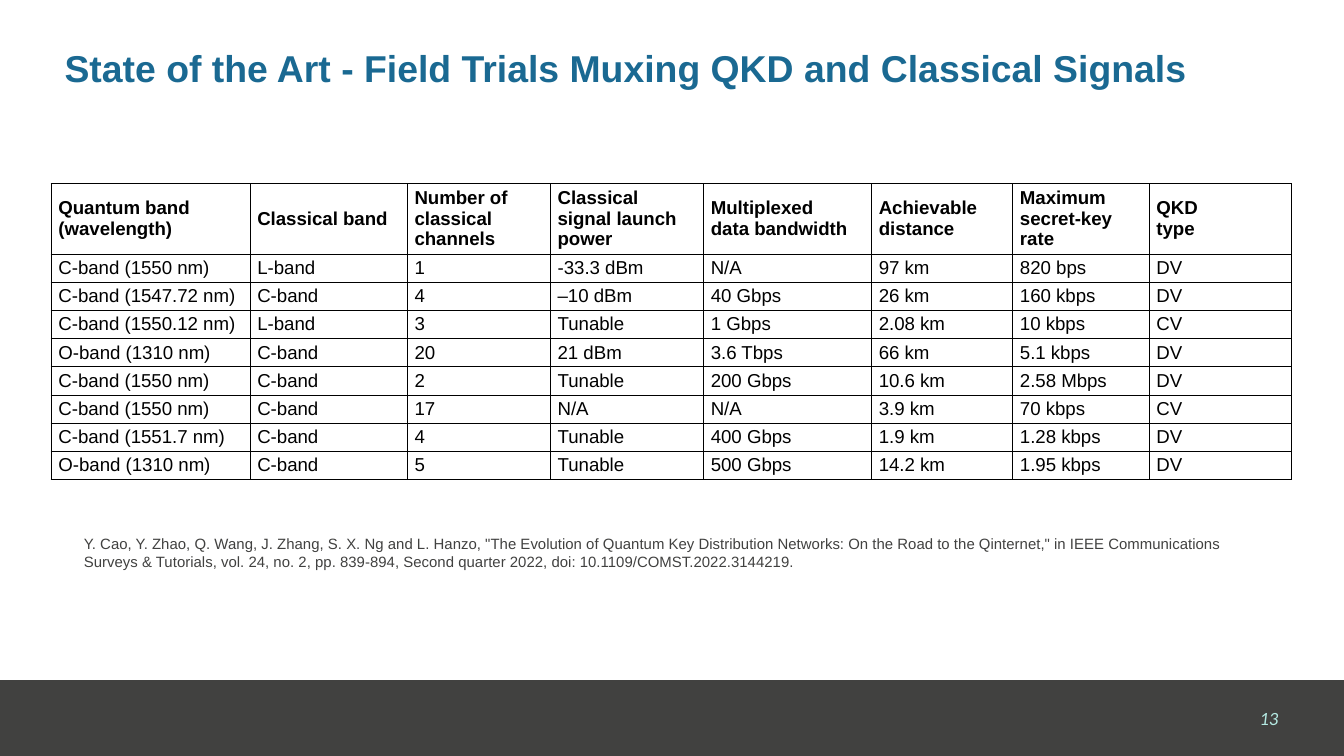
"""Build the slide on field trials that mux QKD and classical signals."""
from lxml.etree import SubElement
from pptx import Presentation
from pptx.dml.color import RGBColor
from pptx.enum.shapes import MSO_SHAPE
from pptx.enum.text import MSO_ANCHOR, PP_ALIGN
from pptx.oxml.ns import qn
from pptx.util import Pt

PX = 4572
HEADER = ["Quantum band\v(wavelength)", "Classical band", "Number of\vclassical\vchannels",
          "Classical\vsignal launch\vpower", "Multiplexed\vdata bandwidth",
          "Achievable\vdistance", "Maximum\vsecret-key\vrate", "QKD\vtype"]
TRIALS = [
    ["C-band (1550 nm)", "L-band", "1", "-33.3 dBm", "N/A", "97 km", "820 bps", "DV"],
    ["C-band (1547.72 nm)", "C-band", "4", "–10 dBm", "40 Gbps", "26 km", "160 kbps", "DV"],
    ["C-band (1550.12 nm)", "L-band", "3", "Tunable", "1 Gbps", "2.08 km", "10 kbps", "CV"],
    ["O-band (1310 nm)", "C-band", "20", "21 dBm", "3.6 Tbps", "66 km", "5.1 kbps", "DV"],
    ["C-band (1550 nm)", "C-band", "2", "Tunable", "200 Gbps", "10.6 km", "2.58 Mbps", "DV"],
    ["C-band (1550 nm)", "C-band", "17", "N/A", "N/A", "3.9 km", "70 kbps", "CV"],
    ["C-band (1551.7 nm)", "C-band", "4", "Tunable", "400 Gbps", "1.9 km", "1.28 kbps", "DV"],
    ["O-band (1310 nm)", "C-band", "5", "Tunable", "500 Gbps", "14.2 km", "1.95 kbps", "DV"],
]
COLUMNS = [296, 234, 213, 228, 250, 210, 203, 212]
REFERENCE = ('Y. Cao, Y. Zhao, Q. Wang, J. Zhang, S. X. Ng and L. Hanzo, "The Evolution of Quantum '
             'Key Distribution Networks: On the Road to the Qinternet," in IEEE Communications '
             'Surveys & Tutorials, vol. 24, no. 2, pp. 839-894, Second quarter 2022, '
             'doi: 10.1109/COMST.2022.3144219.')


def rgb(color):
    return RGBColor.from_string(color)


def write(tf, text, size, color, name="Arial", bold=False, italic=False):
    tf.text = text
    tf.word_wrap = True
    p = tf.paragraphs[0]
    for r in p.runs:
        r.font.name, r.font.size = name, Pt(size)
        r.font.bold, r.font.italic = bold, italic
        r.font.color.rgb = rgb(color)
    for br in p._p.findall(qn("a:br")):
        SubElement(br, qn("a:rPr"), sz=str(size * 100))
    return p


prs = Presentation()
prs.slide_width, prs.slide_height = 2000 * PX, 1125 * PX
s = prs.slides.add_slide(prs.slide_layouts[5])

footer = s.shapes.add_shape(MSO_SHAPE.RECTANGLE, 0, 1012 * PX, 2000 * PX, 113 * PX)
footer.shadow.inherit = False
footer.fill.solid()
footer.fill.fore_color.rgb = rgb("414140")
footer.line.fill.background()

title = s.shapes.title
title.left, title.top, title.width, title.height = 76 * PX, 29 * PX, 1846 * PX, 152 * PX
title.text_frame.vertical_anchor = MSO_ANCHOR.MIDDLE
p = write(title.text_frame, "State of the Art - Field Trials Muxing QKD and Classical Signals",
          20, "1A6992", bold=True)
p.alignment = PP_ALIGN.LEFT
p.line_spacing = 0.9

rows = [HEADER] + TRIALS
table = s.shapes.add_table(len(rows), len(COLUMNS), 76 * PX, 273 * PX,
                           sum(COLUMNS) * PX, 441 * PX).table
table.horz_banding = False
for column, width in zip(table.columns, COLUMNS):
    column.width = width * PX
for i, row in enumerate(rows):
    table.rows[i].height = (42 if i else 105) * PX
    for j, text in enumerate(row):
        cell = table.cell(i, j)
        cell.margin_left = cell.margin_right = 11 * PX
        cell.margin_top = cell.margin_bottom = 5 * PX
        cell.vertical_anchor = MSO_ANCHOR.MIDDLE
        write(cell.text_frame, text, 10, "000000", bold=i == 0)
        tcPr = cell._tc.get_or_add_tcPr()
        for side in ("a:lnL", "a:lnR", "a:lnT", "a:lnB"):
            ln = SubElement(tcPr, qn(side), w=str(Pt(0.5)))
            SubElement(SubElement(ln, qn("a:solidFill")), qn("a:srgbClr"), val="000000")
        cell.fill.background()

number = s.shapes.add_textbox(1472 * PX, 1039 * PX, 450 * PX, 60 * PX)
number.text_frame.vertical_anchor = MSO_ANCHOR.MIDDLE
p = write(number.text_frame, "13", 10, "B4E9E2", name="Calibri", italic=True)
p.alignment = PP_ALIGN.RIGHT

reference = s.shapes.add_textbox(105 * PX, 786 * PX, 1798 * PX, 74 * PX)
write(reference.text_frame, REFERENCE, 8, "414140")

prs.save("out.pptx")
